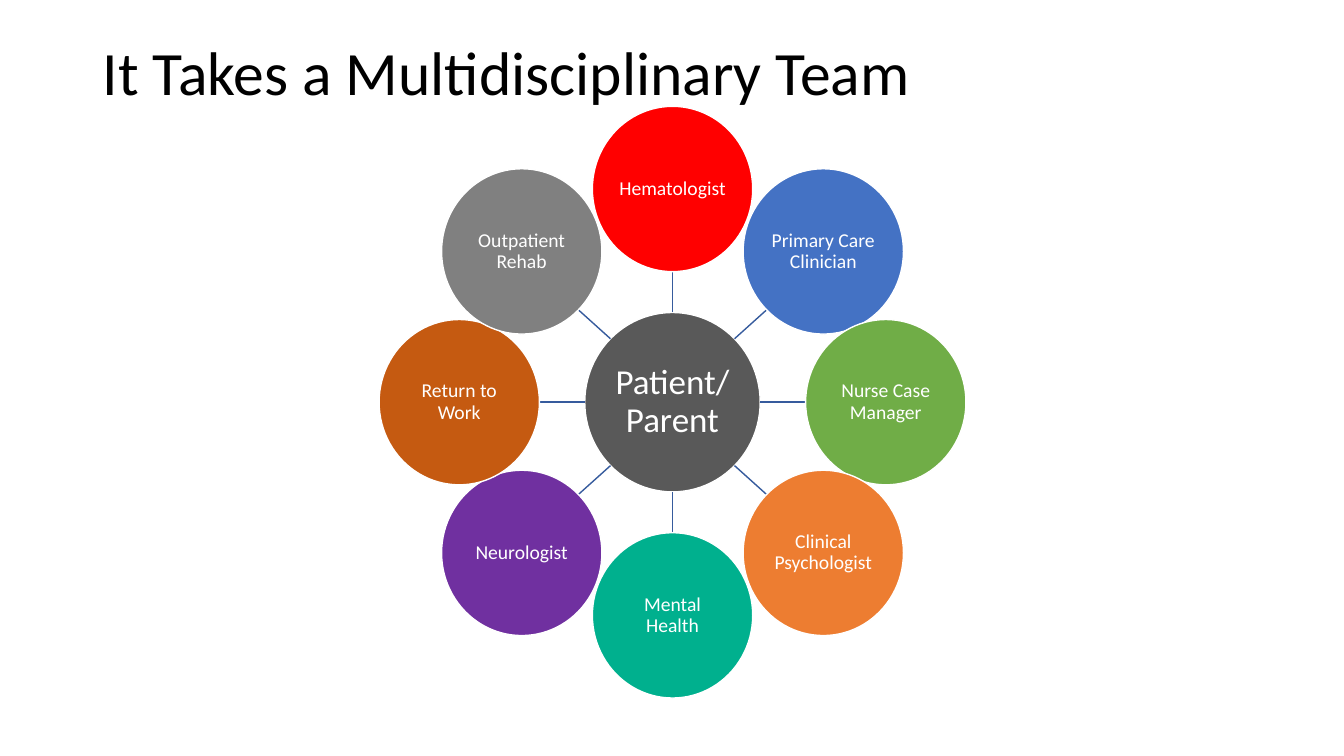
import math
from dataclasses import dataclass

from lxml import etree
from pptx import Presentation
from pptx.dml.color import RGBColor
from pptx.enum.shapes import MSO_CONNECTOR, MSO_SHAPE
from pptx.enum.text import MSO_ANCHOR, MSO_AUTO_SIZE, PP_ALIGN
from pptx.oxml.ns import qn
from pptx.slide import Slide
from pptx.text.text import TextFrame
from pptx.util import Inches, Pt

OVAL = MSO_SHAPE.OVAL
STRAIGHT = MSO_CONNECTOR.STRAIGHT
MIDDLE = MSO_ANCHOR.MIDDLE
NO_AUTO_SIZE = MSO_AUTO_SIZE.NONE
LEFT = PP_ALIGN.LEFT
CENTER = PP_ALIGN.CENTER

BLACK = RGBColor(0x00, 0x00, 0x00)
WHITE = RGBColor(0xFF, 0xFF, 0xFF)
SPOKE_BLUE = RGBColor(0x36, 0x5B, 0x9D)
DARK_GRAY = RGBColor(0x59, 0x59, 0x59)
RED = RGBColor(0xFF, 0x00, 0x00)
BLUE = RGBColor(0x44, 0x72, 0xC4)
GREEN = RGBColor(0x70, 0xAD, 0x47)
ORANGE = RGBColor(0xED, 0x7D, 0x31)
TEAL = RGBColor(0x00, 0xB0, 0x8E)
PURPLE = RGBColor(0x70, 0x30, 0xA0)
BROWN = RGBColor(0xC5, 0x5A, 0x11)
GRAY = RGBColor(0x80, 0x80, 0x80)

FONT = "Calibri"
CENTER_X, CENTER_Y = 6.67, 3.99
RING_RADIUS = 2.115
MEMBER_WIDTH, MEMBER_HEIGHT = 1.59, 1.64


@dataclass(frozen=True)
class Circle:
    label: str
    fill: RGBColor
    x: float = CENTER_X
    y: float = CENTER_Y
    width: float = MEMBER_WIDTH
    height: float = MEMBER_HEIGHT
    size: int = 14
    inset: float = 0

    def edge(self, angle: float) -> tuple[float, float]:
        return (self.x + self.width / 2 * math.cos(angle),
                self.y + self.height / 2 * math.sin(angle))


HUB = Circle("Patient/ Parent", DARK_GRAY, width=1.74, height=1.78, size=25, inset=0.02)
TEAM = [
    ("Hematologist", RED),
    ("Primary Care Clinician", BLUE),
    ("Nurse Case Manager", GREEN),
    ("Clinical Psychologist", ORANGE),
    ("Mental Health", TEAL),
    ("Neurologist", PURPLE),
    ("Return to Work", BROWN),
    ("Outpatient Rehab", GRAY),
]


def write_text(frame: TextFrame, text: str, size: int, color: RGBColor, alignment: PP_ALIGN) -> None:
    frame.text = text
    frame.word_wrap = True
    frame.auto_size = NO_AUTO_SIZE
    frame.vertical_anchor = MIDDLE
    paragraph = frame.paragraphs[0]
    paragraph.alignment = alignment
    paragraph.line_spacing = 0.9
    paragraph.font.name = FONT
    paragraph.font.size = Pt(size)
    paragraph.font.color.rgb = color


def add_title(slide: Slide, text: str) -> None:
    title = slide.shapes.title
    title.left, title.top = Inches(0.92), Inches(0.02)
    title.width, title.height = Inches(11.5), Inches(1.45)
    write_text(title.text_frame, text, 44, BLACK, LEFT)


def add_circle(slide: Slide, circle: Circle) -> None:
    shape = slide.shapes.add_shape(
        OVAL, Inches(circle.x - circle.width / 2), Inches(circle.y - circle.height / 2),
        Inches(circle.width), Inches(circle.height))
    shape.shadow.inherit = False
    shape.fill.solid()
    shape.fill.fore_color.rgb = circle.fill
    shape.line.color.rgb = WHITE
    shape.line.width = Pt(1)
    frame = shape.text_frame
    frame.margin_left = frame.margin_right = Inches(circle.inset)
    frame.margin_top = frame.margin_bottom = Inches(circle.inset)
    write_text(frame, circle.label, circle.size, WHITE, CENTER)


def add_spoke(slide: Slide, member: Circle, angle: float) -> None:
    start = HUB.edge(angle)
    end = member.edge(angle + math.pi)
    spoke = slide.shapes.add_connector(STRAIGHT, *map(Inches, start + end))
    spoke.line.color.rgb = SPOKE_BLUE
    spoke.line.width = Pt(1)
    etree.SubElement(spoke._element.spPr, qn("a:effectLst"))


def main() -> None:
    presentation = Presentation()
    presentation.slide_width = Inches(13.33)
    presentation.slide_height = Inches(7.5)
    slide = presentation.slides.add_slide(presentation.slide_layouts.get_by_name("Title Only"))
    add_title(slide, "It Takes a Multidisciplinary Team")
    add_circle(slide, HUB)
    for index, (label, fill) in enumerate(TEAM):
        angle = math.tau * index / len(TEAM) - math.pi / 2
        member = Circle(label, fill, CENTER_X + RING_RADIUS * math.cos(angle),
                        CENTER_Y + RING_RADIUS * math.sin(angle))
        add_spoke(slide, member, angle)
        add_circle(slide, member)
    presentation.save("out.pptx")


if __name__ == "__main__":
    main()
